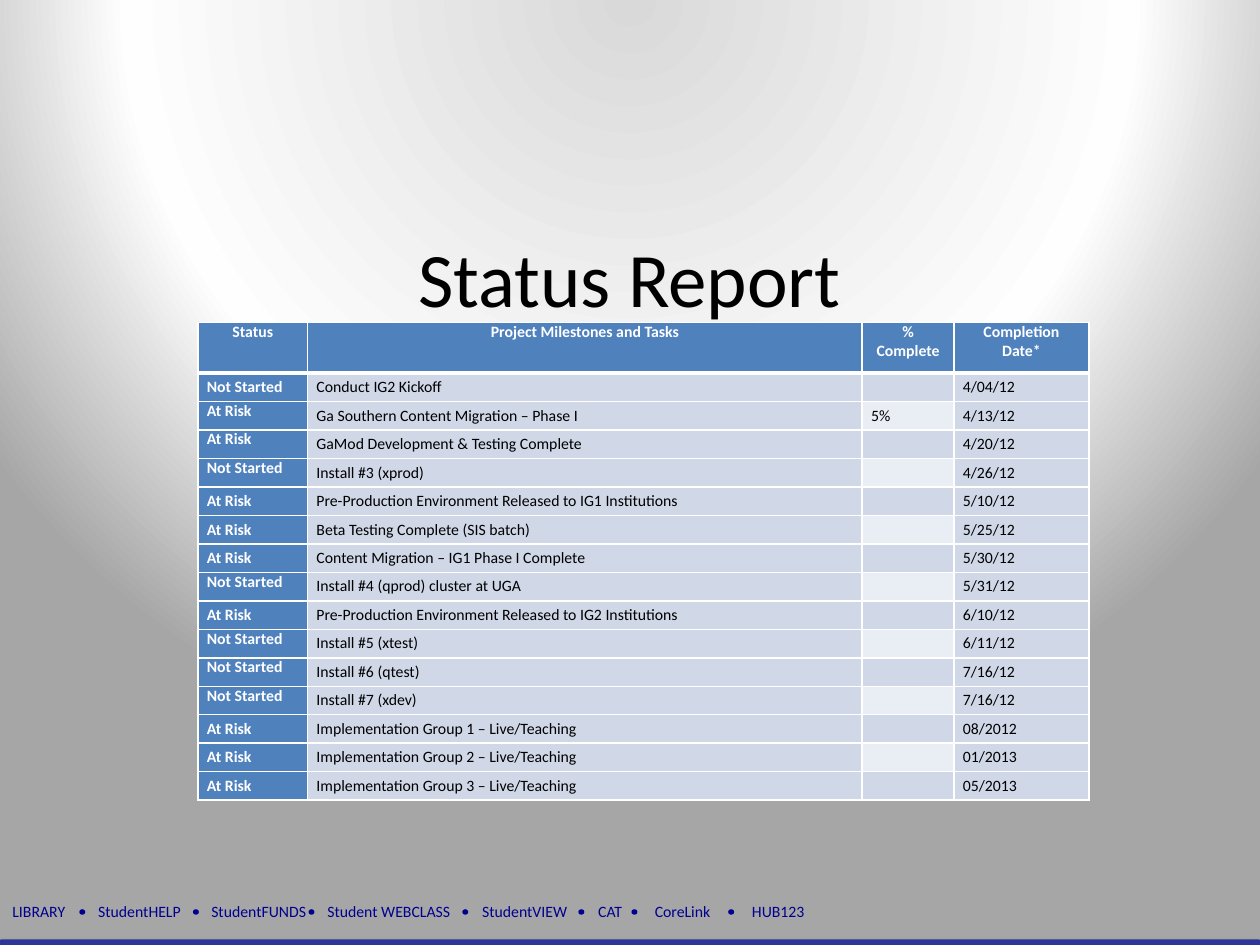
from dataclasses import dataclass

from lxml.etree import SubElement
from pptx import Presentation
from pptx.dml.color import RGBColor
from pptx.enum.shapes import MSO_SHAPE
from pptx.enum.text import MSO_ANCHOR, PP_ALIGN
from pptx.oxml import parse_xml
from pptx.oxml.ns import nsdecls, qn
from pptx.util import Cm, Pt


@dataclass(frozen=True)
class Theme:
    font: str = "Calibri"
    title_size: int = 44
    small_size: int = 9
    black: str = "000000"
    white: str = "FFFFFF"
    navy: str = "000090"
    bar: str = "2E3698"
    header: str = "4F81BD"
    band: str = "D0D8E8"
    light_band: str = "E9EDF4"
    backdrop: tuple = ((0, "D9D9D9", 80), (64, "FEFEFE", 100), (100, "A6A6A6", 100))


HEADINGS = ("Status", "Project Milestones and Tasks", "% Complete", "Completion Date*")
MILESTONES = (
    ("Not Started", "Conduct IG2 Kickoff", "", "4/04/12"),
    ("At Risk", "Ga Southern Content Migration – Phase I", "5%", "4/13/12"),
    ("At Risk", "GaMod Development & Testing Complete", "", "4/20/12"),
    ("Not Started", "Install #3 (xprod)", "", "4/26/12"),
    ("At Risk", "Pre-Production Environment Released to IG1 Institutions", "", "5/10/12"),
    ("At Risk", "Beta Testing Complete (SIS batch)", "", "5/25/12"),
    ("At Risk", "Content Migration – IG1 Phase I Complete", "", "5/30/12"),
    ("Not Started", "Install #4 (qprod) cluster at UGA", "", "5/31/12"),
    ("At Risk", "Pre-Production Environment Released to IG2 Institutions", "", "6/10/12"),
    ("Not Started", "Install #5 (xtest)", "", "6/11/12"),
    ("Not Started", "Install #6 (qtest)", "", "7/16/12"),
    ("Not Started", "Install #7 (xdev)", "", "7/16/12"),
    ("At Risk", "Implementation Group 1 – Live/Teaching", "", "08/2012"),
    ("At Risk", "Implementation Group 2 – Live/Teaching", "", "01/2013"),
    ("At Risk", "Implementation Group 3 – Live/Teaching", "", "05/2013"),
)
TOP_STATUS_ROWS = {0, 2, 3, 4, 8, 10, 11, 12}
COLUMN_WIDTHS = (2.21, 11.18, 1.85, 2.72)
HEADER_HEIGHT = 1.02
TABLE_HEIGHT = 9.63

SERVICES = ("LIBRARY", "StudentHELP", "StudentFUNDS", "Student WEBCLASS",
            "StudentVIEW", "CAT", "CoreLink", "HUB123")
SERVICE_TABS = (1.73, 4.01, 6.35, 9.47, 11.81, 12.95, 14.91)
DOT_LEFTS = (1.6, 3.89, 6.22, 9.32, 11.66, 12.73, 14.68)


class SlideBuilder:
    def __init__(self, page, theme):
        self.page = page
        self.theme = theme

    def background(self):
        self.page.background.fill.solid()
        stops = "".join(
            f'<a:gs pos="{place * 1000}"><a:srgbClr val="{color}">'
            f'<a:alpha val="{alpha * 1000}"/></a:srgbClr></a:gs>'
            for place, color, alpha in self.theme.backdrop)
        gradient = parse_xml(
            f'<a:gradFill {nsdecls("a")} rotWithShape="1"><a:gsLst>{stops}</a:gsLst>'
            '<a:path path="circle"><a:fillToRect l="50000" t="-80000" r="50000" b="180000"/>'
            '</a:path></a:gradFill>')
        properties = self.page.element.find(f'.//{qn("p:bgPr")}')
        properties.replace(properties[0], gradient)

    def shape(self, kind, left, top, width, height, color):
        shape = self.page.shapes.add_shape(kind, Cm(left), Cm(top), Cm(width), Cm(height))
        shape.shadow.inherit = False
        shape.fill.solid()
        shape.fill.fore_color.rgb = RGBColor.from_string(color)
        shape.line.fill.background()
        return shape

    def cast_shadow(self, shape):
        effects = shape.element.spPr.find(qn("a:effectLst"))
        effects.append(parse_xml(
            f'<a:outerShdw {nsdecls("a")} blurRad="40000" dist="23000" dir="5400000" '
            'rotWithShape="0"><a:srgbClr val="000000"><a:alpha val="35000"/>'
            '</a:srgbClr></a:outerShdw>'))

    def format_runs(self, paragraph, size, color, bold=False):
        for span in paragraph.runs:
            span.font.name = self.theme.font
            span.font.size = Pt(size)
            span.font.bold = bold
            span.font.color.rgb = RGBColor.from_string(color)

    def text(self, words, left, top, width, height, size, color,
             align=PP_ALIGN.LEFT, tabs=()):
        box = self.page.shapes.add_textbox(Cm(left), Cm(top), Cm(width), Cm(height))
        box.text_frame.word_wrap = True
        box.text_frame.text = words
        paragraph = box.text_frame.paragraphs[0]
        paragraph.alignment = align
        if tabs:
            stops = SubElement(paragraph._p.get_or_add_pPr(), qn("a:tabLst"))
            for place in tabs:
                SubElement(stops, qn("a:tab"), pos=str(Cm(place)), algn="l")
        self.format_runs(paragraph, size, color)

    def borders(self, cell, top, bottom):
        properties = cell._tc.get_or_add_tcPr()
        for side, points in (("L", 1), ("R", 1), ("T", top), ("B", bottom)):
            properties.append(parse_xml(
                f'<a:ln{side} {nsdecls("a")} w="{Pt(points)}"><a:solidFill>'
                f'<a:srgbClr val="{self.theme.white}"/></a:solidFill></a:ln{side}>'))

    def cell(self, cell, words, row, column):
        theme = self.theme
        is_heading = row == 0
        is_blue = is_heading or column == 0
        self.borders(cell, top=3 if row == 1 else 1, bottom=3 if is_heading else 1)
        cell.fill.solid()
        band = theme.light_band if column == 2 and row % 2 == 0 else theme.band
        cell.fill.fore_color.rgb = RGBColor.from_string(theme.header if is_blue else band)
        cell.margin_left = cell.margin_right = Cm(0.18)
        cell.margin_top = cell.margin_bottom = 0
        is_top = is_heading or (column == 0 and row in TOP_STATUS_ROWS)
        cell.vertical_anchor = MSO_ANCHOR.TOP if is_top else MSO_ANCHOR.MIDDLE
        cell.text_frame.text = words
        paragraph = cell.text_frame.paragraphs[0]
        if is_heading:
            paragraph.alignment = PP_ALIGN.CENTER
            paragraph.space_after = Pt(3)
        if not words:
            paragraph._p.get_or_add_endParaRPr().set("sz", str(theme.small_size * 100))
        self.format_runs(paragraph, theme.small_size,
                         theme.white if is_blue else theme.black, is_blue)

    def table(self, rows, left, top):
        frame = self.page.shapes.add_table(
            len(rows), len(COLUMN_WIDTHS), Cm(left), Cm(top),
            Cm(sum(COLUMN_WIDTHS)), Cm(TABLE_HEIGHT))
        table = frame.table
        for column, width in zip(table.columns, COLUMN_WIDTHS):
            column.width = Cm(width)
        body_height = (TABLE_HEIGHT - HEADER_HEIGHT) / (len(rows) - 1)
        for row, values in enumerate(rows):
            table.rows[row].height = Cm(body_height if row else HEADER_HEIGHT)
            for column, words in enumerate(values):
                self.cell(table.cell(row, column), words, row, column)


def main():
    deck = Presentation()
    deck.slide_width, deck.slide_height = Cm(25.4), Cm(19.05)
    theme = Theme()
    builder = SlideBuilder(deck.slides.add_slide(deck.slide_layouts[6]), theme)

    builder.background()
    bar = builder.shape(MSO_SHAPE.ROUNDED_RECTANGLE, 0, 18.94, 25.4, 0.13, theme.bar)
    builder.cast_shadow(bar)
    builder.text("\t".join(SERVICES), 0, 18.06, 19.84, 0.64,
                 theme.small_size, theme.navy, tabs=SERVICE_TABS)
    for left in DOT_LEFTS:
        builder.shape(MSO_SHAPE.OVAL, left, 18.33, 0.12, 0.11, theme.navy)
    builder.text("Status Report", 1.9, 4.52, 21.59, 4.09,
                 theme.title_size, theme.black, PP_ALIGN.CENTER)
    builder.table((HEADINGS, *MILESTONES), 3.99, 6.5)

    deck.save("out.pptx")


if __name__ == "__main__":
    main()
